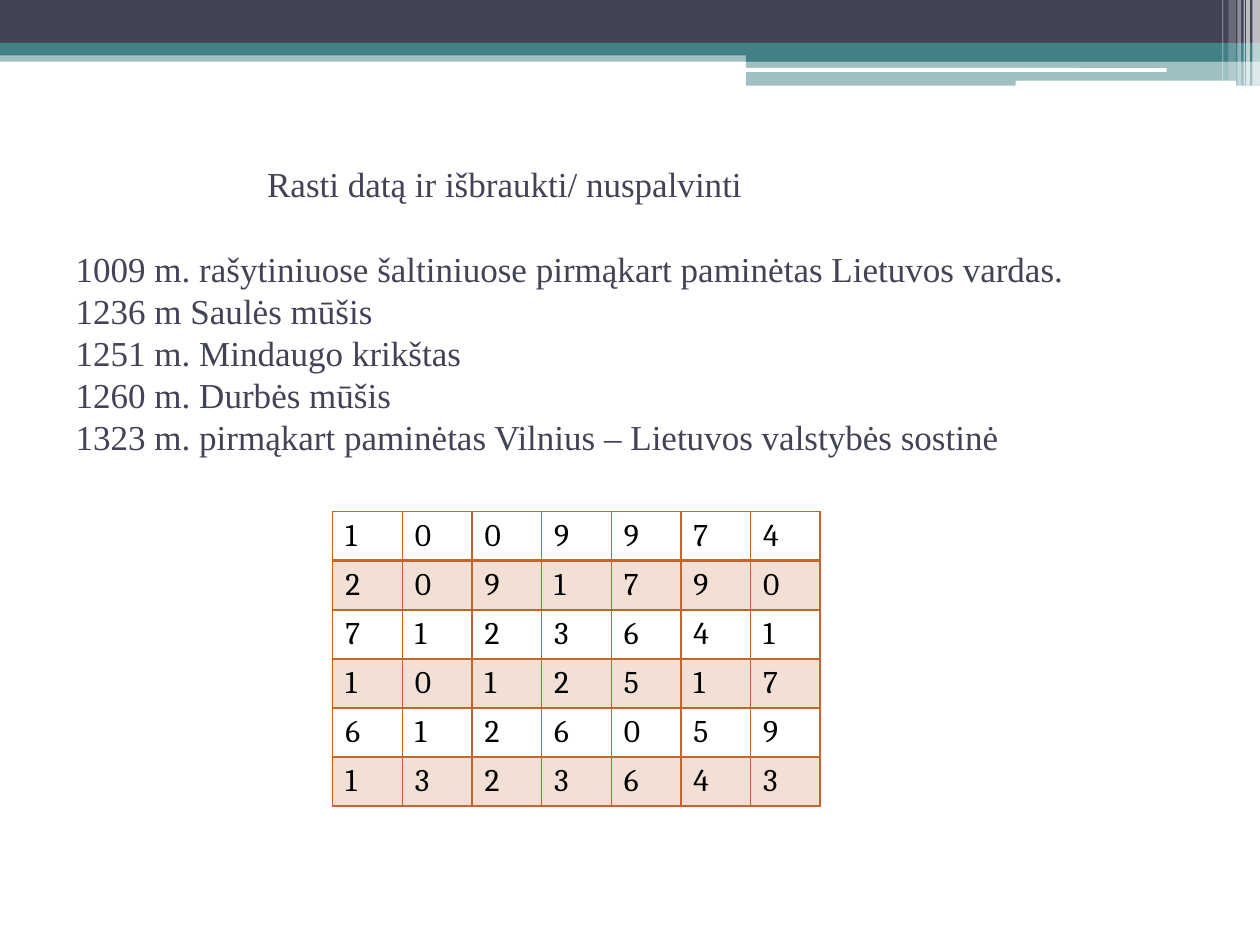
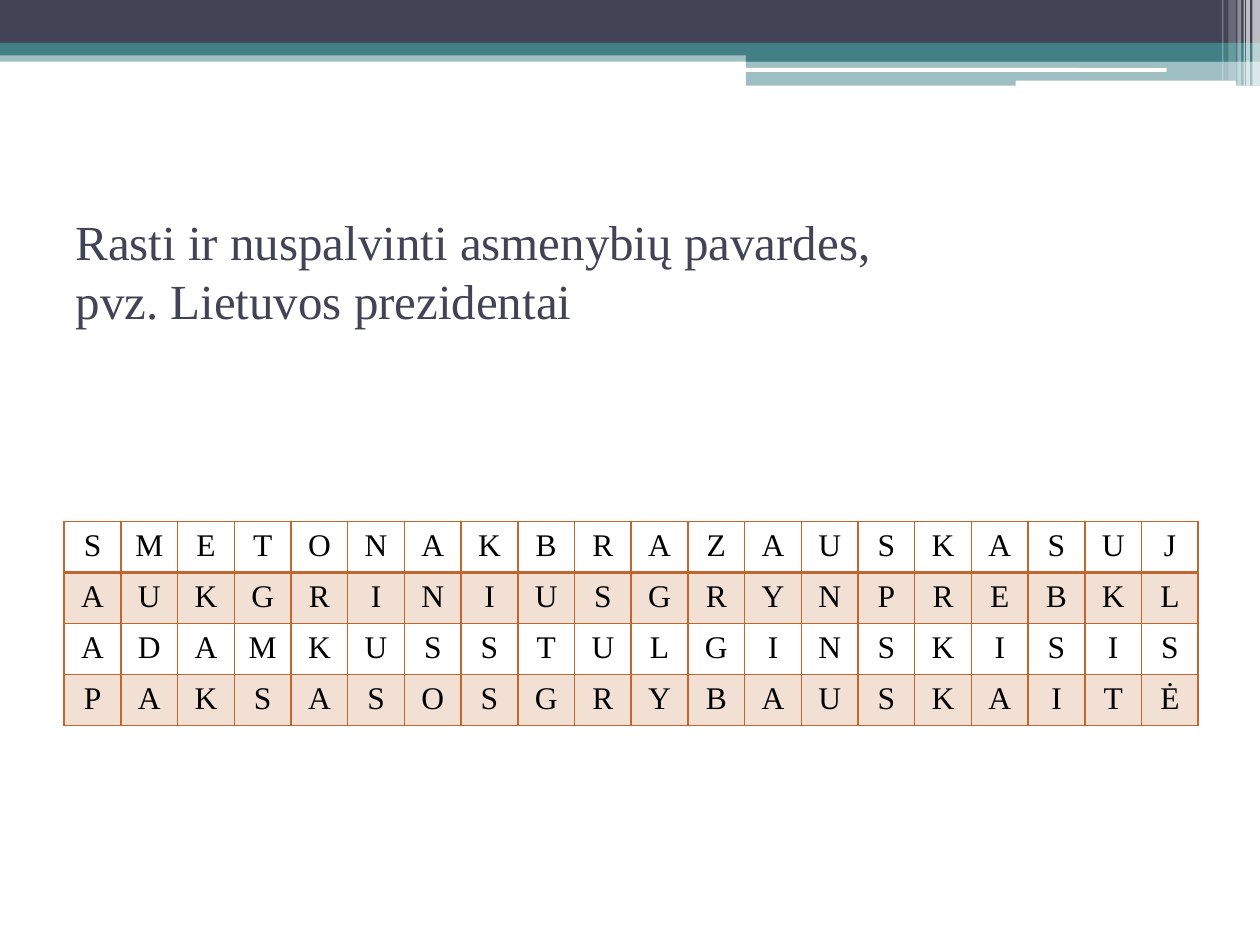
from dataclasses import dataclass

from lxml import etree
from pptx import Presentation
from pptx.dml.color import RGBColor
from pptx.enum.shapes import MSO_SHAPE
from pptx.enum.text import MSO_ANCHOR, MSO_AUTO_SIZE, PP_ALIGN
from pptx.oxml.ns import qn
from pptx.util import Inches, Pt

RECTANGLE = MSO_SHAPE.RECTANGLE
ROUNDED = MSO_SHAPE.ROUNDED_RECTANGLE
LEFT, CENTER = PP_ALIGN.LEFT, PP_ALIGN.CENTER
MIDDLE = MSO_ANCHOR.MIDDLE
NO_AUTOFIT = MSO_AUTO_SIZE.NONE


@dataclass(frozen=True)
class Theme:
    navy: str = "424456"
    teal: str = "438086"
    orange: str = "C4652D"
    white: str = "FFFFFF"
    black: str = "000000"
    serif: str = "Times New Roman"
    digits: str = "Cambria"
    list_size: int = 20
    title_size: int = 28
    cell_size: int = 18
    stripe_opacity: int = 20


THEME = Theme()

# left, top, width, height, colour, opacity in percent
BANDS = [
    (0, 0.4, 10, 0.09, THEME.teal, 50),
    (0, 0, 10, 0.34, THEME.navy, 100),
    (0, 0.34, 10, 0.1, THEME.teal, 100),
    (5.92, 0.39, 4.08, 0.1, THEME.teal, 100),
    (5.92, 0.48, 4.08, 0.2, THEME.teal, 50),
]
WHITE_BARS = [(5.91, 0.54, 3.35, 0.03), (8.06, 0.64, 1.75, 0.05)]
# left, width, height, opacity in percent
CORNER_STRIPES = [
    (9.94, 0.06, 0.68, 65),
    (9.89, 0.03, 0.68, 65),
    (9.87, 0.01, 0.68, 60),
    (9.82, 0.03, 0.68, 40),
    (9.75, 0.06, 0.64, 20),
    (9.7, 0.01, 0.64, 30),
]

DATE_HEADING = "Rasti datą ir išbraukti/ nuspalvinti"
DATE_EVENTS = [
    "1009 m. rašytiniuose šaltiniuose pirmąkart paminėtas Lietuvos vardas.",
    "1236 m Saulės mūšis",
    "1251 m. Mindaugo krikštas",
    "1260 m. Durbės mūšis",
    "1323 m. pirmąkart paminėtas Vilnius – Lietuvos valstybės sostinė",
]
DATE_GRID = ["1009974", "2091790", "7123641", "1012517", "6126059", "1323643"]

PRESIDENT_TITLE = ["Rasti ir nuspalvinti asmenybių pavardes,", "pvz. Lietuvos prezidentai"]
PRESIDENT_GRID = [
    "SMETONAKBRAZAUSKASUJ",
    "AUKGRINIUSGRYNPREBKL",
    "ADAMKUSSTULGINSKISIS",
    "PAKSASOSGRYBAUSKAITĖ",
]


def paint(fill, color, opacity=100):
    fill.solid()
    fill.fore_color.rgb = RGBColor.from_string(color)
    if opacity < 100:
        color_node = fill._xPr.find(qn("a:solidFill")).find(qn("a:srgbClr"))
        etree.SubElement(color_node, qn("a:alpha"), val=str(opacity * 1000))


def add_block(page, kind, box, color, opacity=100):
    shape = page.shapes.add_shape(kind, *map(Inches, box))
    shape.shadow.inherit = False
    shape.line.fill.background()
    paint(shape.fill, color, opacity)
    return shape


def add_header(deck, page):
    """Draw the header on a page, then move it to the master all pages share."""
    header = [add_block(page, RECTANGLE, band[:4], *band[4:]) for band in BANDS]
    header += [add_block(page, ROUNDED, bar, THEME.white) for bar in WHITE_BARS]
    header += [
        add_block(page, RECTANGLE, (left, 0, width, height), THEME.white, opacity)
        for left, width, height, opacity in CORNER_STRIPES
    ]
    for number, shape in enumerate(header, start=101):
        shape.element.xpath("./p:nvSpPr/p:cNvPr")[0].set("id", str(number))
        deck.slide_master.shapes.element.append(shape.element)


def style_span(span, font, size, color):
    span.font.name = font
    span.font.size = Pt(size)
    span.font.color.rgb = RGBColor.from_string(color)


def set_indent(para, inches):
    properties = para._p.get_or_add_pPr()
    properties.set("marL", str(Inches(inches)))
    properties.set("indent", "0")


def set_title(page, box, lines, size):
    title = page.shapes.title
    title.left, title.top, title.width, title.height = map(Inches, box)
    frame = title.text_frame
    frame.word_wrap = True
    frame.auto_size = NO_AUTOFIT
    frame.vertical_anchor = MIDDLE
    frame.text = "\n".join(lines)
    for para in frame.paragraphs:
        para.alignment = LEFT
        para.line_spacing = 1.0
        para.space_before = para.space_after = Pt(0)
        set_indent(para, 0)
        for span in para.runs:
            style_span(span, THEME.serif, size, THEME.navy)
    return frame


def set_borders(cell, bottom_width, top_width):
    properties = cell._tc.get_or_add_tcPr()
    widths = {"lnL": 1, "lnR": 1, "lnT": top_width, "lnB": bottom_width}
    for index, (side, width) in enumerate(widths.items()):
        line = etree.Element(qn(f"a:{side}"), w=str(Pt(width)))
        fill = etree.SubElement(line, qn("a:solidFill"))
        etree.SubElement(fill, qn("a:srgbClr"), val=THEME.orange)
        properties.insert(index, line)


def add_puzzle(page, box, rows, font, alignment):
    """Fill the box with one character per cell, tinting every second row."""
    graphic = page.shapes.add_table(len(rows), len(rows[0]), *map(Inches, box))
    table = graphic.table
    table.first_row = table.horz_banding = False
    for row_index, characters in enumerate(rows):
        for column_index, character in enumerate(characters):
            cell = table.cell(row_index, column_index)
            cell.text = character
            para = cell.text_frame.paragraphs[0]
            para.alignment = alignment
            style_span(para.runs[0], font, THEME.cell_size, THEME.black)
            if row_index % 2:
                paint(cell.fill, THEME.orange, THEME.stripe_opacity)
            else:
                cell.fill.background()
            set_borders(
                cell,
                bottom_width=2 if row_index == 0 else 1,
                top_width=2 if row_index == 1 else 1,
            )


def build_dates(page):
    frame = set_title(page, (0.5, 1.25, 9, 2.42), [DATE_HEADING, *DATE_EVENTS], THEME.list_size)
    heading = frame.paragraphs[0]
    heading.space_after = Pt(25)
    set_indent(heading, 1.52)
    add_puzzle(page, (2.64, 4.06, 3.87, 2.34), DATE_GRID, THEME.digits, LEFT)


def build_presidents(page):
    set_title(page, (0.5, 1.25, 9, 1.79), PRESIDENT_TITLE, THEME.title_size)
    add_puzzle(page, (0.51, 4.14, 9, 1.62), PRESIDENT_GRID, THEME.serif, CENTER)


def main():
    deck = Presentation()
    deck.slide_width, deck.slide_height = Inches(10), Inches(7.5)
    title_only = deck.slide_layouts.get_by_name("Title Only")
    pages = [deck.slides.add_slide(title_only) for _ in range(2)]
    add_header(deck, pages[0])
    for page, build in zip(pages, (build_dates, build_presidents)):
        build(page)
    deck.save("out.pptx")


if __name__ == "__main__":
    main()
